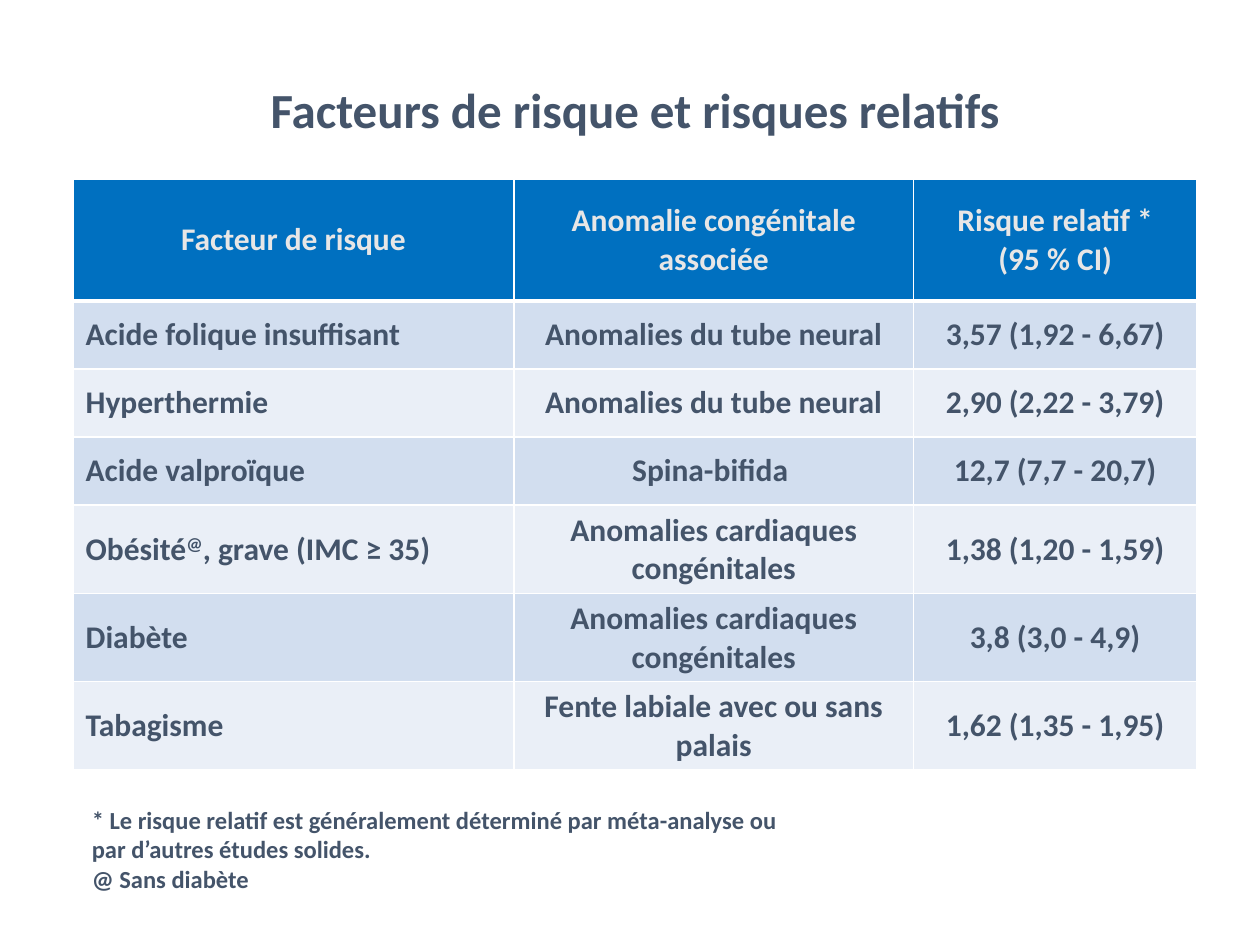
import pptx
import pptx.dml.color
import pptx.enum.text
import pptx.oxml
import pptx.oxml.ns
import pptx.util

Inches = pptx.util.Inches
RGBColor = pptx.dml.color.RGBColor
Align = pptx.enum.text.PP_ALIGN
Anchor = pptx.enum.text.MSO_ANCHOR

SLATE = RGBColor(0x44, 0x54, 0x6A)
PALE = RGBColor(0xE7, 0xE6, 0xE6)
BLUE = RGBColor(0x00, 0x70, 0xC0)
BANDS = RGBColor(0xD2, 0xDE, 0xEF), RGBColor(0xEA, 0xEF, 0xF7)
WHITE = RGBColor(0xFF, 0xFF, 0xFF)

COLUMN_WIDTHS = 3.5, 3.17, 2.25
HEADER_HEIGHT, ROW_HEIGHT = 0.97, 0.54
SUPERSCRIPT = "@"
RISKS = [
    ("Facteur de risque", "Anomalie congénitale associée", "Risque relatif *\n(95 % CI)"),
    ("Acide folique insuffisant", "Anomalies du tube neural", "3,57 (1,92 - 6,67)"),
    ("Hyperthermie", "Anomalies du tube neural", "2,90 (2,22 - 3,79)"),
    ("Acide valproïque", "Spina-bifida ", "12,7 (7,7 - 20,7)"),
    ("Obésité@, grave (IMC ≥ 35)", "Anomalies cardiaques congénitales", "1,38 (1,20 - 1,59)"),
    ("Diabète", "Anomalies cardiaques congénitales", "3,8 (3,0 - 4,9)"),
    ("Tabagisme", "Fente labiale avec ou sans palais", "1,62 (1,35 - 1,95)"),
]
NOTES = (
    "* Le risque relatif est généralement déterminé par méta-analyse ou par d’autres études solides.\n"
    "@ Sans diabète"
)


class RiskPage:
    """Holds the text style and the current slide, and draws its elements."""

    def __init__(self, page, font="Calibri"):
        self.page = page
        self.font = font

    def style(self, frame, size, color, align):
        for para in frame.paragraphs:
            para.alignment = align
            for span in para.runs:
                span.font.name = self.font
                span.font.size = pptx.util.Pt(size)
                span.font.bold = True
                span.font.color.rgb = color

    def text(self, words, left, top, width, height, size, align=Align.LEFT,
             anchor=Anchor.TOP, spacing=1.0):
        box = self.page.shapes.add_textbox(
            Inches(left), Inches(top), Inches(width), Inches(height))
        frame = box.text_frame
        frame.word_wrap = True
        frame.vertical_anchor = anchor
        frame.text = words
        self.style(frame, size, SLATE, align)
        for para in frame.paragraphs:
            para.line_spacing = spacing

    def border(self, cell, bottom):
        properties = cell._tc.get_or_add_tcPr()
        widths = {"lnL": 1, "lnR": 1, "lnT": 1, "lnB": bottom}
        for position, (side, width) in enumerate(widths.items()):
            line = pptx.oxml.parse_xml(
                f'<a:{side} {pptx.oxml.ns.nsdecls("a")} w="{pptx.util.Pt(width)}">'
                f'<a:solidFill><a:srgbClr val="{WHITE}"/></a:solidFill></a:{side}>')
            properties.insert(position, line)

    def cell(self, cell, words, fill, color, align, bottom):
        cell.fill.solid()
        cell.fill.fore_color.rgb = fill
        cell.vertical_anchor = Anchor.MIDDLE
        before, mark, after = words.partition(SUPERSCRIPT)
        cell.text_frame.text = before
        if mark:
            para = cell.text_frame.paragraphs[0]
            for part in (mark, after):
                para.add_run().text = part
            para.runs[1]._r.get_or_add_rPr().set("baseline", "30000")
        self.style(cell.text_frame, 18, color, align)
        self.border(cell, bottom)

    def table(self, rows, left, top):
        height = HEADER_HEIGHT + ROW_HEIGHT * (len(rows) - 1)
        table = self.page.shapes.add_table(
            len(rows), len(COLUMN_WIDTHS), Inches(left), Inches(top),
            Inches(sum(COLUMN_WIDTHS)), Inches(height)).table
        for column, width in zip(table.columns, COLUMN_WIDTHS):
            column.width = Inches(width)
        for index, values in enumerate(rows):
            header = index == 0
            table.rows[index].height = Inches(HEADER_HEIGHT if header else ROW_HEIGHT)
            fill = BLUE if header else BANDS[(index - 1) % 2]
            for column, words in enumerate(values):
                align = Align.CENTER if header or column else Align.LEFT
                self.cell(table.cell(index, column), words, fill,
                          PALE if header else SLATE, align, 3 if header else 1)


def main():
    deck = pptx.Presentation()
    deck.slide_width, deck.slide_height = Inches(10), Inches(7.5)
    page = RiskPage(deck.slides.add_slide(deck.slide_layouts[6]))
    page.text("Facteurs de risque et risques relatifs", 0.04, 0.1, 10, 1.58, 28,
              Align.CENTER, Anchor.MIDDLE, 0.9)
    page.table(RISKS, 0.58, 1.42)
    page.text(NOTES, 0.63, 6.34, 5.85, 0.57, 14)
    deck.save("out.pptx")


if __name__ == "__main__":
    main()
